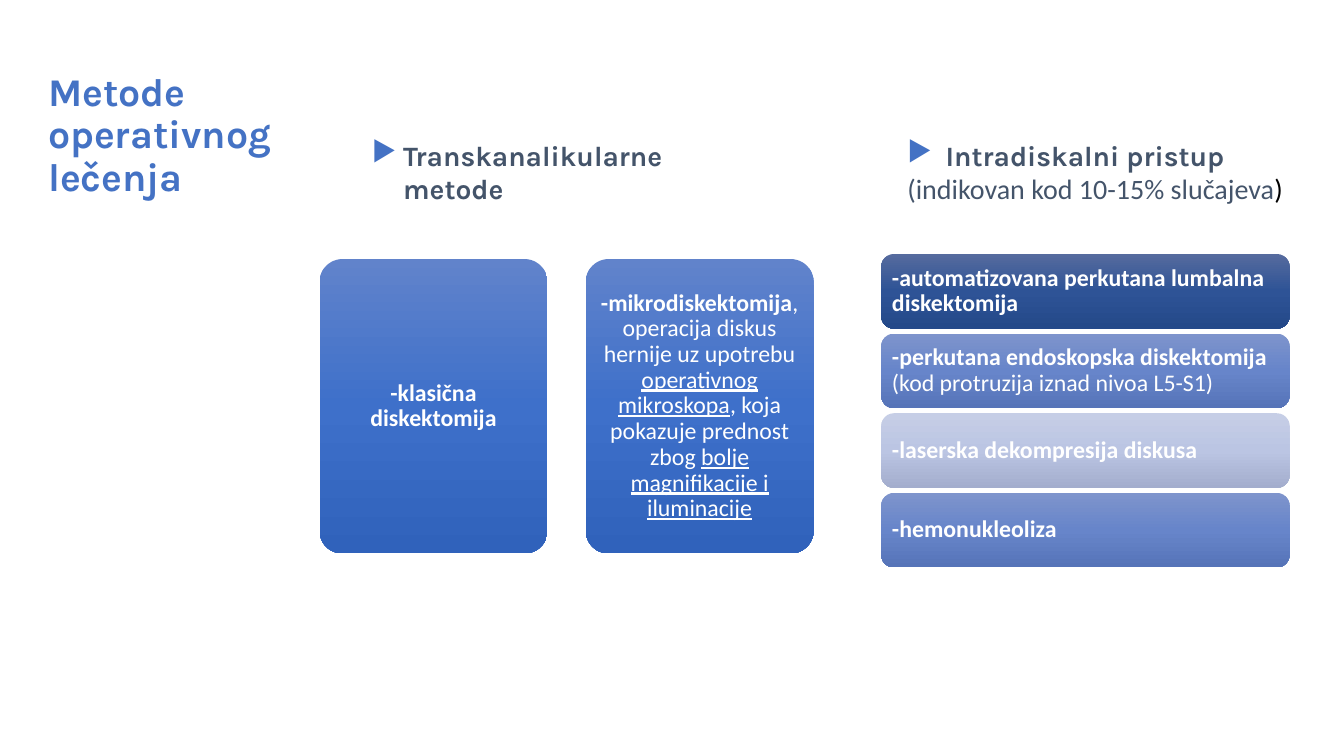
"""Build the slide on methods of operative treatment."""
import pptx
import pptx.dml.color
import pptx.enum.shapes
import pptx.enum.text
import pptx.oxml.ns
import pptx.util
from lxml import etree
from pptx.util import Inches

COLOURS = {"blue": "4472C4", "slate": "44546A", "black": "000000", "white": "FFFFFF"}
GRADIENTS = {
    "card": ("6183CB", "3E70CA", "3062BB"),
    "dark": ("566B9E", "2E5396", "244989"),
    "medium": ("7E94CC", "6785CA", "5674B8"),
    "light": ("C6CEE6", "BBC5E3", "A3ADCD"),
}
TITLE = {"name": "Karla", "size": 28, "bold": True, "colour": "blue"}
HEADING = {"name": "Karla", "size": 20, "bold": True, "colour": "slate"}
NOTE = {"name": "Calibri", "size": 20, "bold": False, "colour": "slate"}
NOTE_END = {**NOTE, "colour": "black"}
STRONG = {"name": "Calibri", "size": 17, "bold": True, "colour": "white"}
PLAIN = {**STRONG, "bold": False}
UNDERLINED = {**PLAIN, "underline": True}

CARDS = [
    [("-klasična diskektomija", STRONG)],
    [
        ("-mikrodiskektomija", STRONG),
        (", operacija diskus hernije uz upotrebu ", PLAIN),
        ("operativnog mikroskopa", UNDERLINED),
        (", koja pokazuje prednost zbog ", PLAIN),
        ("bolje magnifikacije i iluminacije", UNDERLINED),
    ],
]
BARS = [
    ("dark", [("-automatizovana perkutana lumbalna diskektomija", STRONG)]),
    ("medium", [("-perkutana endoskopska diskektomija ", STRONG),
                ("(kod protruzija iznad nivoa L5-S1)", PLAIN)]),
    ("light", [("-laserska dekompresija diskusa", STRONG)]),
    ("medium", [("-hemonukleoliza", STRONG)]),
]


def add_element(parent, tag, **attributes):
    """Append a drawing element to its parent."""
    return etree.SubElement(parent, pptx.oxml.ns.qn(tag), attributes)


def write_spans(para, spans):
    """Add formatted runs to a paragraph."""
    for text, style in spans:
        span = para.add_run()
        span.text = text
        for key, value in style.items():
            if key == "colour":
                span.font.color.rgb = pptx.dml.color.RGBColor.from_string(COLOURS[value])
            else:
                setattr(span.font, key, pptx.util.Pt(value) if key == "size" else value)


def add_bullet(para, indent):
    """Give a paragraph a blue triangle with a hanging indent."""
    properties = para._p.get_or_add_pPr()
    properties.set("marL", str(Inches(indent)))
    properties.set("indent", str(Inches(-indent)))
    add_element(add_element(properties, "a:buClr"), "a:srgbClr", val=COLOURS["blue"])
    add_element(properties, "a:buChar", char="▶")


def add_text(slide, place, paragraphs, indent=None):
    """Add a wrapping text box, with a bullet first if an indent is given."""
    box = slide.shapes.add_textbox(*map(Inches, place))
    frame = box.text_frame
    frame.word_wrap = True
    for index, spans in enumerate(paragraphs):
        para = frame.add_paragraph() if index else frame.paragraphs[0]
        if indent and index == 0:
            add_bullet(para, indent)
        write_spans(para, spans)
    return frame


def fill_gradient(shape, colours):
    """Fill a shape from top to bottom with evenly spaced colours."""
    shape.fill.gradient()
    shape.fill.gradient_angle = 270
    stops = shape._element.spPr.find(".//" + pptx.oxml.ns.qn("a:gsLst"))
    for stop in list(stops):
        stops.remove(stop)
    for index, colour in enumerate(colours):
        position = index * 100000 // (len(colours) - 1)
        stop = add_element(stops, "a:gs", pos=str(position))
        add_element(stop, "a:srgbClr", val=colour)


def add_panel(slide, place, gradient, spans, align, corner):
    """Add a rounded panel with a gradient and its text."""
    shape = slide.shapes.add_shape(
        pptx.enum.shapes.MSO_SHAPE.ROUNDED_RECTANGLE, *map(Inches, place))
    shape.adjustments[0] = corner
    shape.shadow.inherit = False
    shape.line.fill.background()
    fill_gradient(shape, GRADIENTS[gradient])
    frame = shape.text_frame
    frame.word_wrap = True
    frame.vertical_anchor = pptx.enum.text.MSO_ANCHOR.MIDDLE
    for side in ("left", "top", "right", "bottom"):
        setattr(frame, f"margin_{side}", Inches(0.07))
    para = frame.paragraphs[0]
    para.alignment = align
    para.line_spacing = 0.9
    write_spans(para, spans)


def main():
    """Build and save the deck."""
    deck = pptx.Presentation()
    deck.slide_width, deck.slide_height = Inches(13.33), Inches(7.5)
    slide = deck.slides.add_slide(deck.slide_layouts[6])
    align = pptx.enum.text.PP_ALIGN

    title = add_text(slide, (0.38, 0.57, 3.76, 1.56),
                     [[("Metode operativnog lečenja", TITLE)]])
    title.vertical_anchor = pptx.enum.text.MSO_ANCHOR.MIDDLE
    title.paragraphs[0].line_spacing = 0.9

    add_text(slide, (3.59, 1.32, 4.06, 0.77),
             [[("Transkanalikularne metode", HEADING)]], 0.31)
    add_text(slide, (8.9, 1.32, 4.05, 0.77),
             [[("Intradiskalni pristup", HEADING)],
              [("(indikovan kod 10-15% slučajeva", NOTE), (")", NOTE_END)]], 0.38)

    for index, spans in enumerate(CARDS):
        place = (3.17 + index * 2.64, 2.57, 2.26, 2.92)
        add_panel(slide, place, "card", spans, align.CENTER, 0.1)
    for index, (gradient, spans) in enumerate(BARS):
        place = (8.74, 2.52 + index * 0.79, 4.05, 0.74)
        add_panel(slide, place, gradient, spans, align.LEFT, 0.17)

    deck.save("out.pptx")


if __name__ == "__main__":
    main()
